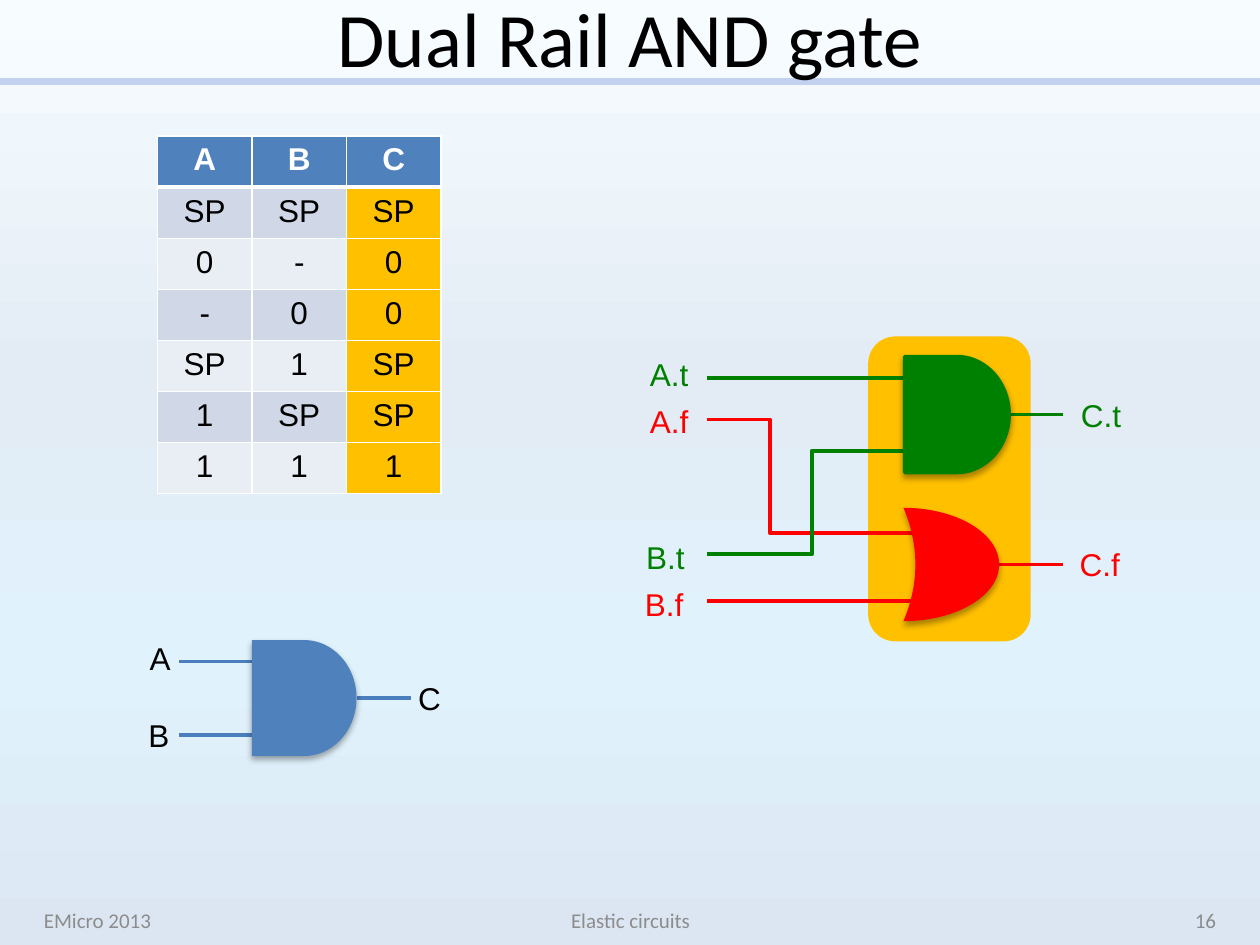
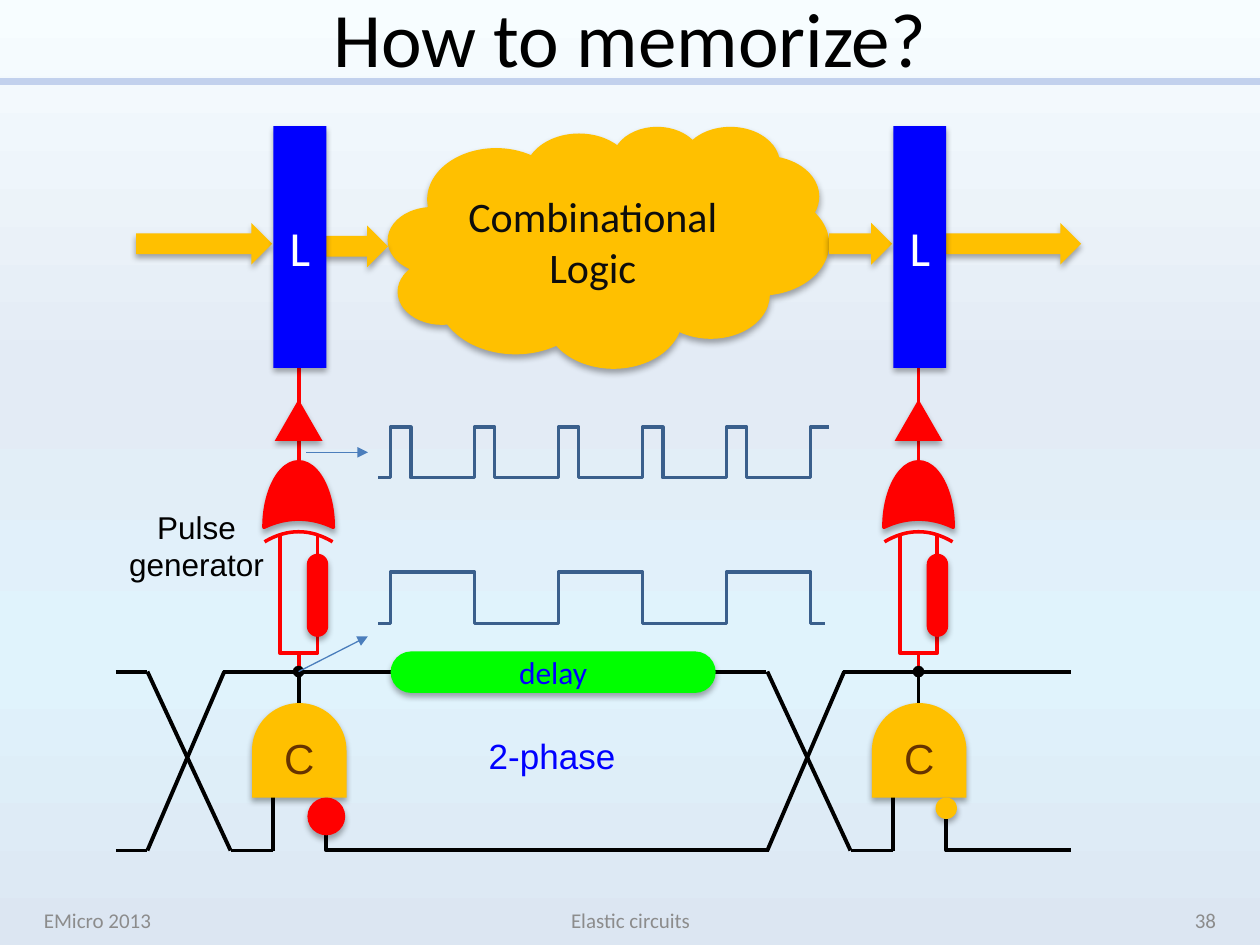
from lxml import etree
from pptx import Presentation, util as u
from pptx.dml.color import RGBColor
from pptx.enum import shapes as kinds, text
from pptx.oxml.ns import qn

SHAPE, LINK, ALIGN = kinds.MSO_SHAPE, kinds.MSO_CONNECTOR, text.PP_ALIGN
BLACK, WHITE, GREY = "000000", "FFFFFF", "8C8C8C"
BLUE, WIRE_BLUE, WAVE_BLUE, PURE_BLUE = "4F81BD", "4B7EBC", "3A5F8C", "0000FF"
AMBER, RED, GREEN, LIME, BROWN = "FFC000", "FF0000", "008000", "00FF00", "663300"
BAND_COLOURS = ["D0D8E8", "E9EDF4"]
BACKGROUND = [(0, "F7FDFF"), (40, "E3EBF5"), (70, "E0F3FC"), (100, "DCE6F2")]
TITLE_BOX = (0.5, 0, 9, 0.58)
FOOTER_LEFT, FOOTER_CENTRE = "EMicro 2013", "Elastic circuits"

TRUTH_TABLE = [
    "A B C", "SP SP SP", "0 - 0", "- 0 0", "SP 1 SP", "1 SP SP", "1 1 1",
]
TABLE_BOX = (1.25, 1.08, 2.25, 2.84)

# label, left, top, colour
GATE_LABELS = [
    ("A", 1.09, 5.02, BLACK), ("B", 1.08, 5.63, BLACK), ("C", 3.22, 5.34, BLACK),
    ("A.t", 5.06, 2.77, GREEN), ("A.f", 5.06, 3.14, RED),
    ("B.t", 5.03, 4.22, GREEN), ("B.f", 5.02, 4.59, RED),
    ("C.t", 8.48, 3.09, GREEN), ("C.f", 8.47, 4.28, RED),
]
# y, from x, to x, colour
GATE_WIRES = [
    (5.25, 2, 1.42, WIRE_BLUE), (5.83, 2, 1.42, WIRE_BLUE), (5.54, 3.26, 2.83, WIRE_BLUE),
    (3, 5.61, 7.18, GREEN), (3.58, 6.89, 7.18, GREEN), (3.29, 8.44, 8.02, GREEN),
    (4.48, 7.93, 8.44, RED), (4.23, 6.6, 7.29, RED), (4.77, 5.61, 7.3, RED),
]

STAGE_STEP = 4.92
# shift, bubble size, bubble colour
STAGES = [(0, 0.3, RED), (STAGE_STEP, 0.17, AMBER)]
# from x, from y, to x, to y, colour, within the first stage
STAGE_WIRES = [
    (2.37, 2.91, 2.37, 3.66, RED), (2.37, 5.17, 2.37, 5.34, RED),
    (2.17, 6.32, 2.17, 6.75, BLACK), (2.17, 6.75, 1.83, 6.75, BLACK),
    (1.17, 5.33, 1.83, 6.75, BLACK), (2.37, 5.33, 1.77, 5.33, BLACK),
    (1.78, 5.33, 1.17, 6.75, BLACK),
]
RAILS = [
    (0.92, 5.33, 1.17, 5.33), (0.92, 6.75, 1.17, 6.75),
    (2.37, 5.33, 6.08, 5.33), (7.3, 5.33, 8.5, 5.33),
]
# left, top, width
DATA_ARROWS = [(1.08, 1.77, 1.08), (2.58, 1.79, 0.5), (6.58, 1.77, 0.5), (7.5, 1.77, 1.08)]
HALF_PERIOD = 2 / 3
TOGGLES = [3.1 + HALF_PERIOD * step for step in range(6)]
PULSES = [edge + width for edge in TOGGLES for width in (0, 0.16)][:-1]
# edges, low, high, end
WAVES = [(PULSES, 3.79, 3.39, 6.58), (TOGGLES, 4.95, 4.54, 6.55)]
PROBES = [(2.43, 3.59, 2.92, 3.59), (2.37, 5.33, 2.92, 5.05)]


def inches(values):
    return [u.Inches(value) for value in values]


def colour(value):
    return RGBColor.from_string(value)


def write(frame, words, size, font, shade, align=ALIGN.CENTER, bold=False):
    frame.text = words
    for paragraph in frame.paragraphs:
        paragraph.alignment = align
        for run in paragraph.runs:
            run.font.size, run.font.name, run.font.bold = u.Pt(size), font, bold
            run.font.color.rgb = colour(shade)


def add_label(slide, words, box, size, font, shade, align=ALIGN.LEFT,
              wrap=False, anchor=text.MSO_ANCHOR.TOP):
    frame = slide.shapes.add_textbox(*inches(box)).text_frame
    frame.word_wrap, frame.vertical_anchor = wrap, anchor
    if not wrap:
        frame.auto_size = text.MSO_AUTO_SIZE.SHAPE_TO_FIT_TEXT
    write(frame, words, size, font, shade, align)


def add_block(slide, kind, box, fill, outline=None, shadow=True, rotation=0, adjust=None):
    """Preset shape with a flat fill and a soft shadow below it."""
    shape = slide.shapes.add_shape(kind, *inches(box))
    shape.rotation = rotation
    if adjust is not None:
        shape.adjustments[0] = adjust
    shape.fill.solid()
    shape.fill.fore_color.rgb = colour(fill)
    if outline:
        shape.line.color.rgb, shape.line.width = colour(outline), u.Pt(2)
    else:
        shape.line.fill.background()
    shape.shadow.inherit = False
    if shadow:
        effects = shape.element.spPr.find(qn("a:effectLst"))
        outer = etree.SubElement(effects, qn("a:outerShdw"), blurRad=str(u.Pt(3.5)),
                                 dist=str(u.Pt(2.2)), dir="5400000", rotWithShape="0")
        black = etree.SubElement(outer, qn("a:srgbClr"), val=BLACK)
        etree.SubElement(black, qn("a:alpha"), val="32000")
    return shape


def add_wire(slide, ends, shade, width=2.25, tip=None, bend=None):
    """Connector; bend is the share of its run where an elbow turns."""
    kind = LINK.STRAIGHT if bend is None else LINK.ELBOW
    wire = slide.shapes.add_connector(kind, *inches(ends))
    wire.line.color.rgb, wire.line.width = colour(shade), u.Pt(width)
    properties = wire.element.spPr
    if tip:
        etree.SubElement(properties.find(qn("a:ln")), qn("a:tailEnd"), type=tip)
    if bend is not None:
        geometry = properties.find(qn("a:prstGeom"))
        guides = geometry.find(qn("a:avLst"))
        if guides is None:
            guides = etree.SubElement(geometry, qn("a:avLst"))
        etree.SubElement(guides, qn("a:gd"), name="adj1", fmla=f"val {round(bend * 100000)}")
    etree.SubElement(properties, qn("a:effectLst"))
    return wire


def add_outline(slide, points, shade, width=2):
    start, *rest = [inches(point) for point in points]
    builder = slide.shapes.build_freeform(*start, scale=1)
    builder.add_line_segments(rest, close=False)
    outline = builder.convert_to_shape()
    outline.fill.background()
    outline.line.color.rgb, outline.line.width = colour(shade), u.Pt(width)
    outline.shadow.inherit = False


def style_template(presentation):
    """Put the background on the master and the title frame on the layout."""
    master, layout = presentation.slide_master, presentation.slide_layouts[5]
    fill = master.background.fill
    fill.gradient()
    fill.gradient_angle = 270
    stops = master.element.xpath("./p:cSld/p:bg//a:gsLst")[0]
    for stop in list(stops):
        stops.remove(stop)
    for position, shade in BACKGROUND:
        stop = etree.SubElement(stops, qn("a:gs"), pos=str(position * 1000))
        etree.SubElement(stop, qn("a:srgbClr"), val=shade)
    title = layout.placeholders[0]
    title.left, title.top, title.width, title.height = inches(TITLE_BOX)
    return layout


def add_slide(presentation, layout, title, number):
    slide = presentation.slides.add_slide(layout)
    rule = add_wire(slide, (0, 0.65, 10, 0.65), "C2D1ED", 4)
    slide.shapes.title.element.addprevious(rule.element)
    frame = slide.shapes.title.text_frame
    frame.auto_size, frame.vertical_anchor = text.MSO_AUTO_SIZE.NONE, text.MSO_ANCHOR.MIDDLE
    write(frame, title, 44, "Calibri", BLACK)
    footers = [(FOOTER_LEFT, 0.25, 2.33, ALIGN.LEFT), (FOOTER_CENTRE, 3.42, 3.17, ALIGN.CENTER),
               (str(number), 7.42, 2.33, ALIGN.RIGHT)]
    for words, left, width, align in footers:
        add_label(slide, words, (left, 7.1, width, 0.4), 12, "Calibri", GREY, align,
                  True, text.MSO_ANCHOR.MIDDLE)
    return slide


def add_truth_table(slide):
    rows = [row.split() for row in TRUTH_TABLE]
    table = slide.shapes.add_table(len(rows), len(rows[0]), *inches(TABLE_BOX)).table
    table.horz_banding = False
    for r, row in enumerate(rows):
        for c, value in enumerate(row):
            cell, header = table.cell(r, c), r == 0
            properties = cell._tc.get_or_add_tcPr()
            for side in "LRTB":
                thick = (header and side == "B") or (r == 1 and side == "T")
                border = etree.SubElement(properties, qn(f"a:ln{side}"),
                                          w=str(u.Pt(3 if thick else 1)))
                paint = etree.SubElement(border, qn("a:solidFill"))
                etree.SubElement(paint, qn("a:srgbClr"), val=WHITE)
            band = AMBER if c == len(row) - 1 else BAND_COLOURS[(r - 1) % 2]
            cell.fill.solid()
            cell.fill.fore_color.rgb = colour(BLUE if header else band)
            write(cell.text_frame, value, 18, "Arial", WHITE if header else BLACK, bold=header)


def draw_dual_rail(slide):
    add_truth_table(slide)
    add_block(slide, SHAPE.ROUNDED_RECTANGLE, (6.89, 2.67, 1.29, 2.42), AMBER, shadow=False)
    for y, start, end, shade in GATE_WIRES:
        add_wire(slide, (start, y, end, y), shade)
    add_block(slide, SHAPE.FLOWCHART_DELAY, (2, 5.08, 0.83, 0.92), BLUE)
    add_block(slide, SHAPE.FLOWCHART_DELAY, (7.18, 2.83, 0.83, 0.92), GREEN, GREEN)
    add_block(slide, SHAPE.MOON, (7.17, 4.03, 0.76, 0.9), RED, rotation=180, adjust=0.875)
    add_wire(slide, (5.61, 3.33, 6.61, 4.23), RED, bend=0.5)
    add_wire(slide, (5.61, 4.4, 6.89, 3.58), GREEN, bend=0.65)
    for words, left, top, shade in GATE_LABELS:
        width = 0.37 if len(words) == 1 else 0.53
        add_label(slide, words, (left, top, width, 0.4), 18, "Arial", shade)


def draw_stage(slide, shift, bubble, bubble_colour):
    """Latch, pulse generator, C element and the crossing wires before it."""
    for x1, y1, x2, y2, shade in STAGE_WIRES:
        add_wire(slide, (x1 + shift, y1, x2 + shift, y2), shade)
    add_wire(slide, (2.37 + shift, 5.58, 2.37 + shift, 5.33), BLACK, tip="oval")
    latch = add_block(slide, SHAPE.RECTANGLE, (2.17 + shift, 1, 0.42, 1.92), PURE_BLUE)
    write(latch.text_frame, "L", 28, "Calibri", WHITE)
    add_block(slide, SHAPE.ISOSCELES_TRIANGLE, (2.18 + shift, 3.17, 0.38, 0.33), RED)
    add_block(slide, SHAPE.MOON, (2.11 + shift, 3.65, 0.52, 0.55), RED, RED,
              rotation=90, adjust=0.875)
    steps = [step / 8 for step in range(-8, 9)]
    add_outline(slide, [(2.37 + shift + 0.27 * t, 4.22 + 0.08 * t * t) for t in steps], RED)
    left, right = 2.22 + shift, 2.52 + shift
    add_outline(slide, [(left, 4.24), (left, 5.18), (right, 5.18), (right, 4.24)], RED, 2.25)
    add_block(slide, SHAPE.ROUNDED_RECTANGLE, (2.19 + shift, 4.64, 0.66, 0.17), RED,
              rotation=90, adjust=0.5)
    gate = add_block(slide, SHAPE.FLOWCHART_DELAY, (2 + shift, 5.58, 0.75, 0.75), AMBER,
                     rotation=270)
    write(gate.text_frame, "C", 24, "Arial", BROWN)
    gate.text_frame.word_wrap = False
    gate.element.txBody.find(qn("a:bodyPr")).set("vert", "vert")
    add_block(slide, SHAPE.OVAL, (2.59 + shift - bubble / 2, 6.33, bubble, bubble), bubble_colour)


def square_wave(edges, low, high, end):
    points, level, other = [(3, low)], low, high
    for edge in edges:
        points += [(edge, level), (edge, other)]
        level, other = other, level
    return points + [(end, level)]


def draw_memory(slide):
    for rail in RAILS:
        add_wire(slide, rail, BLACK)
    add_wire(slide, (6.1, 6.75, 2.59, 6.49), BLACK, bend=1)
    add_wire(slide, (8.5, 6.75, 7.5, 6.5), BLACK, bend=0.99)
    cloud = add_block(slide, SHAPE.CLOUD, (3.08, 1, 3.5, 1.92), AMBER)
    write(cloud.text_frame, "Combinational\nLogic", 24, "Calibri", "0D0D0D")
    for left, top, width in DATA_ARROWS:
        add_block(slide, SHAPE.RIGHT_ARROW, (left, top, width, 0.33), AMBER)
    for stage in STAGES:
        draw_stage(slide, *stage)
    delay = add_block(slide, SHAPE.ROUNDED_RECTANGLE, (3.1, 5.17, 2.58, 0.33), LIME, adjust=0.5)
    write(delay.text_frame, "delay", 18, "Calibri", PURE_BLUE)
    add_label(slide, "Pulse\ngenerator", (0.92, 3.98, 1.28, 0.71), 18, "Arial", BLACK,
              ALIGN.CENTER)
    add_label(slide, "2-phase", (3.78, 5.78, 1.22, 0.44), 20, "Arial", PURE_BLUE)
    for wave in WAVES:
        add_outline(slide, square_wave(*wave), WAVE_BLUE)
    for probe in PROBES:
        add_wire(slide, probe, WIRE_BLUE, 0.75, "triangle")


def main():
    presentation = Presentation()
    presentation.slide_width, presentation.slide_height = inches((10, 7.5))
    layout = style_template(presentation)
    draw_dual_rail(add_slide(presentation, layout, "Dual Rail AND gate", 16))
    draw_memory(add_slide(presentation, layout, "How to memorize?", 38))
    presentation.save("out.pptx")


if __name__ == "__main__":
    main()
